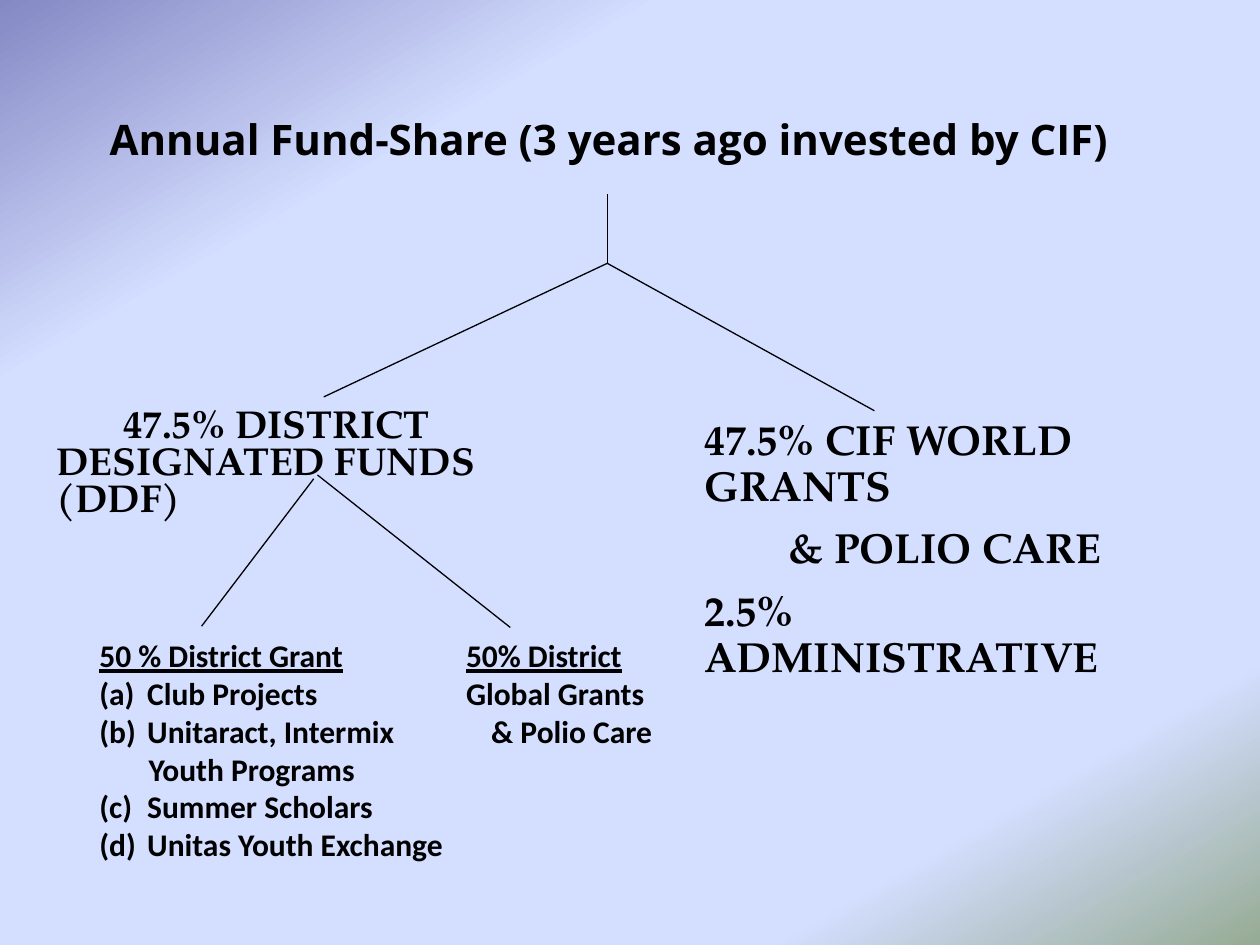
from lxml import etree
from pptx import Presentation
from pptx.dml.color import RGBColor
from pptx.enum import shapes, text
from pptx.oxml import ns
from pptx.util import Inches, Pt

BLACK = RGBColor(0x00, 0x00, 0x00)
INDIGO = RGBColor(0x84, 0x88, 0xC4)
PALE_BLUE = RGBColor(0xD4, 0xDE, 0xFF)
SAGE = RGBColor(0x96, 0xAB, 0x94)
BACKGROUND = [(0, INDIGO), (23, PALE_BLUE), (83, PALE_BLUE), (100, SAGE)]
HEADING = "Open Sans"
SERIF = "TeX Gyre Pagella"
SANS = "Calibri"


def add_text(p, content, font=SANS, size=18, underline=False, caps=False,
             line=1.0, before=0, left=0, first=0, number=0):
    p.alignment = text.PP_ALIGN.LEFT
    p.line_spacing = line
    p.space_before = Pt(before)
    r = p.add_run()
    r.text = content
    r.font.name = font
    r.font.size = Pt(size)
    r.font.bold = True
    r.font.underline = underline
    r.font.color.rgb = BLACK
    if caps:
        r.font._element.set("cap", "all")
    pPr = p._p.get_or_add_pPr()
    pPr.set("marL", str(Inches(left)))
    pPr.set("indent", str(Inches(first)))
    if number:
        bullet = etree.SubElement(pPr, ns.qn("a:buAutoNum"), type="alphaLcParenBoth")
        if number > 1:
            bullet.set("startAt", str(number))


class Builder:
    def __init__(self, prs):
        self.s = prs.slides.add_slide(prs.slide_layouts[5])

    def background(self, stops, angle):
        fill = self.s.background.fill
        fill.gradient()
        grad = self.s._element.find(".//" + ns.qn("a:gradFill"))
        for child in list(grad):
            grad.remove(child)
        gs_list = etree.SubElement(grad, ns.qn("a:gsLst"))
        for position, color in stops:
            gs = etree.SubElement(gs_list, ns.qn("a:gs"), pos=str(position * 1000))
            etree.SubElement(gs, ns.qn("a:srgbClr"), val=str(color))
        etree.SubElement(grad, ns.qn("a:lin"), ang=str(angle * 60000), scaled="0")

    def title(self, content, left, top, width, height):
        sp = self.s.shapes.title
        sp.left, sp.top = Inches(left), Inches(top)
        sp.width, sp.height = Inches(width), Inches(height)
        tf = sp.text_frame
        tf.auto_size = text.MSO_AUTO_SIZE.NONE
        tf.vertical_anchor = text.MSO_ANCHOR.MIDDLE
        add_text(tf.paragraphs[0], content, font=HEADING, size=24, line=0.9)

    def text_box(self, left, top, width, height, paragraphs, **style):
        sp = self.s.shapes.add_textbox(Inches(left), Inches(top),
                                       Inches(width), Inches(height))
        tf = sp.text_frame
        tf.word_wrap = True
        for i, (content, own) in enumerate(paragraphs):
            p = tf.add_paragraph() if i else tf.paragraphs[0]
            add_text(p, content, **{**style, **own})

    def line(self, start, end):
        c = self.s.shapes.add_connector(shapes.MSO_CONNECTOR.STRAIGHT,
                                        *map(Inches, start + end))
        c.line.color.rgb = BLACK
        c.line.width = Pt(0.75)
        etree.SubElement(c._element.spPr, ns.qn("a:effectLst"))


def main():
    prs = Presentation()
    prs.slide_width, prs.slide_height = Inches(10), Inches(7.5)
    b = Builder(prs)
    b.background(BACKGROUND, 60)
    b.title("Annual Fund-Share (3 years ago invested by CIF)", 0.77, 0.4, 8.54, 1.45)

    b.text_box(0.35, 3.19, 3.86, 0.71,
               [("47.5% District Designated Funds (DDF)", {"first": 0.53})],
               font=SERIF, size=22.2, caps=True, line=0.8)
    b.text_box(5.49, 3.28, 4.11, 2.24,
               [("47.5% CIF World Grants", {}),
                ("& Polio Care", {"before": 10, "left": 0.67}),
                ("2.5% Administrative", {"before": 10})],
               font=SERIF, size=24, caps=True, line=0.9)

    item = {"left": 0.38, "first": -0.38}
    b.text_box(0.69, 5, 2.95, 1.92,
               [("50 % District Grant", {"underline": True}),
                ("Club Projects", {**item, "number": 1}),
                ("Unitaract, Intermix", {**item, "number": 1}),
                ("Youth Programs", {"left": 0.39}),
                ("Summer Scholars", {**item, "number": 3}),
                ("Unitas Youth Exchange", {**item, "number": 3})])
    b.text_box(3.6, 5, 1.75, 1.01,
               [("50% District", {"underline": True}),
                ("Global Grants", {}),
                ("& Polio Care", {"left": 0.2})])

    fork = (4.82, 2.09)
    b.line((4.82, 1.54), fork)
    b.line(fork, (2.57, 3.15))
    b.line(fork, (6.94, 3.26))
    b.line((2.49, 3.8), (1.6, 4.97))
    b.line((2.52, 3.77), (4.05, 4.98))
    prs.save("out.pptx")


if __name__ == "__main__":
    main()
